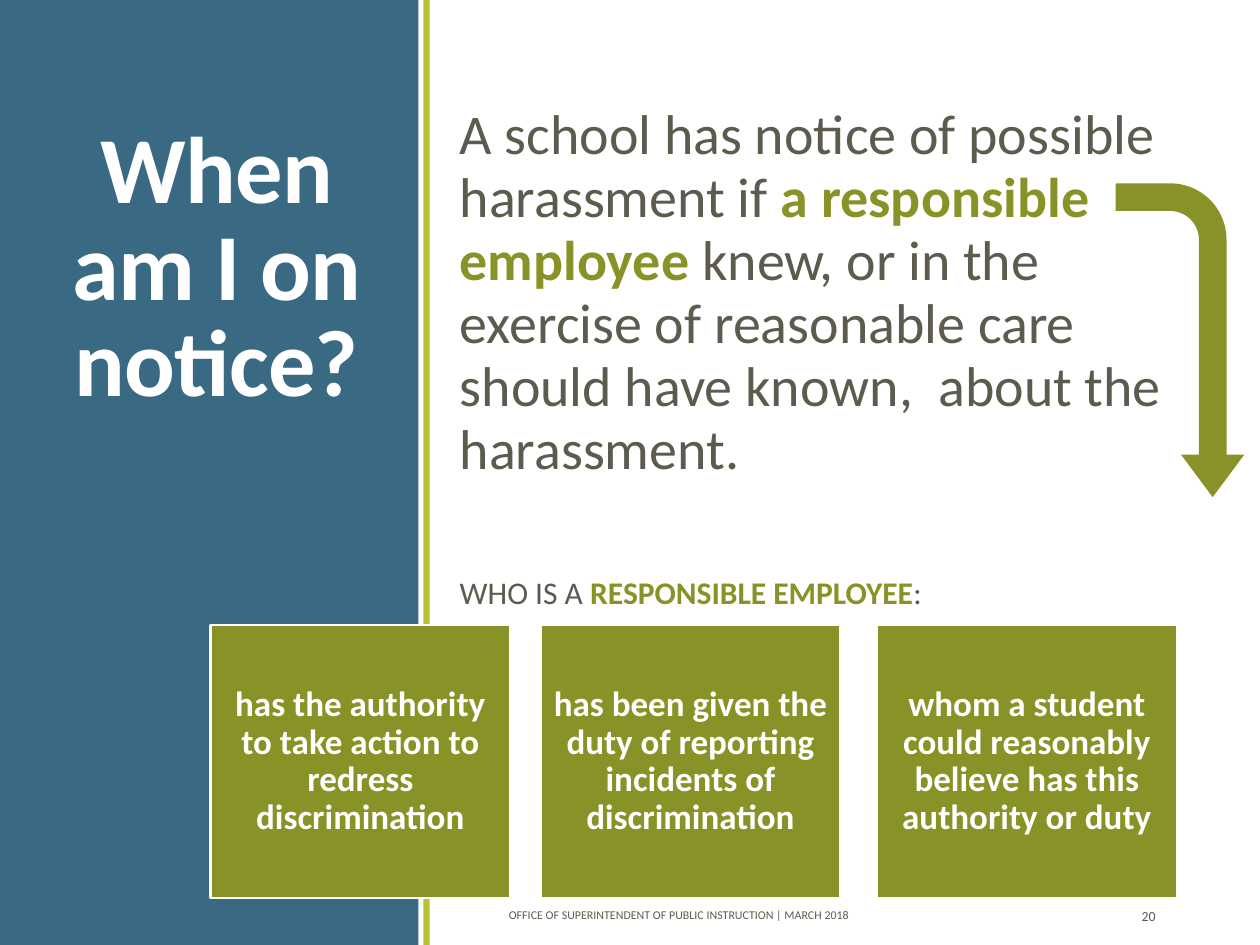
from dataclasses import dataclass

from pptx import Presentation
from pptx.dml.color import RGBColor
from pptx.enum.shapes import MSO_SHAPE
from pptx.enum.text import MSO_ANCHOR, PP_ALIGN
from pptx.util import Inches, Pt


@dataclass(frozen=True)
class Theme:
    font: str = "Calibri"
    blue: str = "3A6983"
    lime: str = "B7C333"
    olive: str = "899226"
    ink: str = "5D5B4E"
    white: str = "FFFFFF"
    title: float = 54
    statement: float = 32
    card: float = 20
    question: float = 18
    page: float = 7.9
    footer: float = 6.8


THEME = Theme()


def add_block(slide, box, fill, preset=MSO_SHAPE.RECTANGLE, outline=None):
    block = slide.shapes.add_shape(preset, *map(Inches, box))
    block.shadow.inherit = False
    block.fill.solid()
    block.fill.fore_color.rgb = RGBColor.from_string(fill)
    if outline:
        block.line.color.rgb = RGBColor.from_string(outline)
        block.line.width = Pt(1.25)
    else:
        block.line.fill.background()
    return block


def write(frame, runs, size, anchor=MSO_ANCHOR.TOP, align=PP_ALIGN.LEFT, spacing=None):
    """Fill a frame with one paragraph of (text, colour, bold) runs."""
    frame.word_wrap = True
    frame.vertical_anchor = anchor
    paragraph = frame.paragraphs[0]
    paragraph.alignment = align
    if spacing:
        paragraph.line_spacing = spacing
    for text, color, bold in runs:
        run = paragraph.add_run()
        run.text = text
        run.font.name = THEME.font
        run.font.size = Pt(size)
        run.font.bold = bold
        run.font.color.rgb = RGBColor.from_string(color)
    return paragraph


def add_text(slide, box, runs, size, **layout):
    label = slide.shapes.add_textbox(*map(Inches, box))
    return write(label.text_frame, runs, size, **layout)


def add_sidebar(slide, box):
    left, top, width, height = box
    add_block(slide, box, THEME.blue)
    add_block(slide, (left + width + 0.04, top, 0.05, height), THEME.lime)
    heading = add_text(
        slide, (left + 0.23, top + 0.85, 2.98, 2.5),
        [("When am I on notice?", THEME.white, True)], THEME.title,
        anchor=MSO_ANCHOR.BOTTOM, align=PP_ALIGN.CENTER, spacing=0.85)
    # Slightly tightened letter spacing
    heading.runs[0].font._element.set("spc", "-40")


def add_statement(slide, box):
    left, top, width, height = box
    add_text(slide, box, [
        ("A school has notice of possible harassment if ", THEME.ink, False),
        ("a responsible  employee ", THEME.olive, True),
        ("knew, or in the exercise of reasonable care should have known,  "
         "about the harassment.", THEME.ink, False),
    ], THEME.statement, spacing=Pt(36))

    # Arrow from the key phrase down to its definition
    arrow = add_block(slide, (left + 4.57, top + 1.42, 2.49, 1.02),
                      THEME.olive, MSO_SHAPE.BENT_ARROW)
    for index, value in enumerate((0.215, 0.246, 0.33, 0.438)):
        arrow.adjustments[index] = value
    arrow.rotation = 90


def add_definition(slide, box):
    left, top, width, height = box
    add_text(slide, (left + 1.88, top - 0.46, 5.75, 0.4), [
        ("WHO IS A ", THEME.ink, False),
        ("RESPONSIBLE EMPLOYEE", THEME.olive, True),
        (":", THEME.ink, False),
    ], THEME.question)

    # Criteria cards: offset from the region's left edge, and wording
    criteria = (
        (0, "has the authority to take action to redress discrimination"),
        (2.62, "has been given the duty of reporting incidents of discrimination"),
        (5.29, "whom a student could reasonably believe has this authority or duty"),
    )
    for offset, criterion in criteria:
        card = add_block(slide, (left + offset, top, 2.38, height),
                         THEME.olive, outline=THEME.white)
        frame = card.text_frame
        frame.margin_left = frame.margin_right = Inches(0.08)
        frame.margin_top = frame.margin_bottom = Inches(0.08)
        write(frame, [(criterion, THEME.white, True)], THEME.card,
              anchor=MSO_ANCHOR.MIDDLE, align=PP_ALIGN.CENTER, spacing=0.9)


def add_footer(slide, box):
    left, top, width, height = box
    add_text(slide, (left, top, 3.81, height),
             [("OFFICE OF SUPERINTENDENT OF PUBLIC INSTRUCTION | MARCH 2018",
               THEME.ink, False)], THEME.footer, anchor=MSO_ANCHOR.MIDDLE)
    add_text(slide, (left + width - 1.08, top + 0.01, 1.08, height),
             [("20", THEME.ink, False)], THEME.page,
             anchor=MSO_ANCHOR.MIDDLE, align=PP_ALIGN.RIGHT)


def main():
    deck = Presentation()
    deck.slide_width, deck.slide_height = Inches(10), Inches(7.5)
    slide = deck.slides.add_slide(deck.slide_layouts[6])
    add_sidebar(slide, (0, 0, 3.32, 7.5))
    add_footer(slide, (3.94, 7.06, 5.33, 0.4))
    add_statement(slide, (3.55, 0.77, 5.92, 3.13))
    add_definition(slide, (1.67, 4.96, 7.67, 2.17))
    deck.save("out.pptx")


if __name__ == "__main__":
    main()
